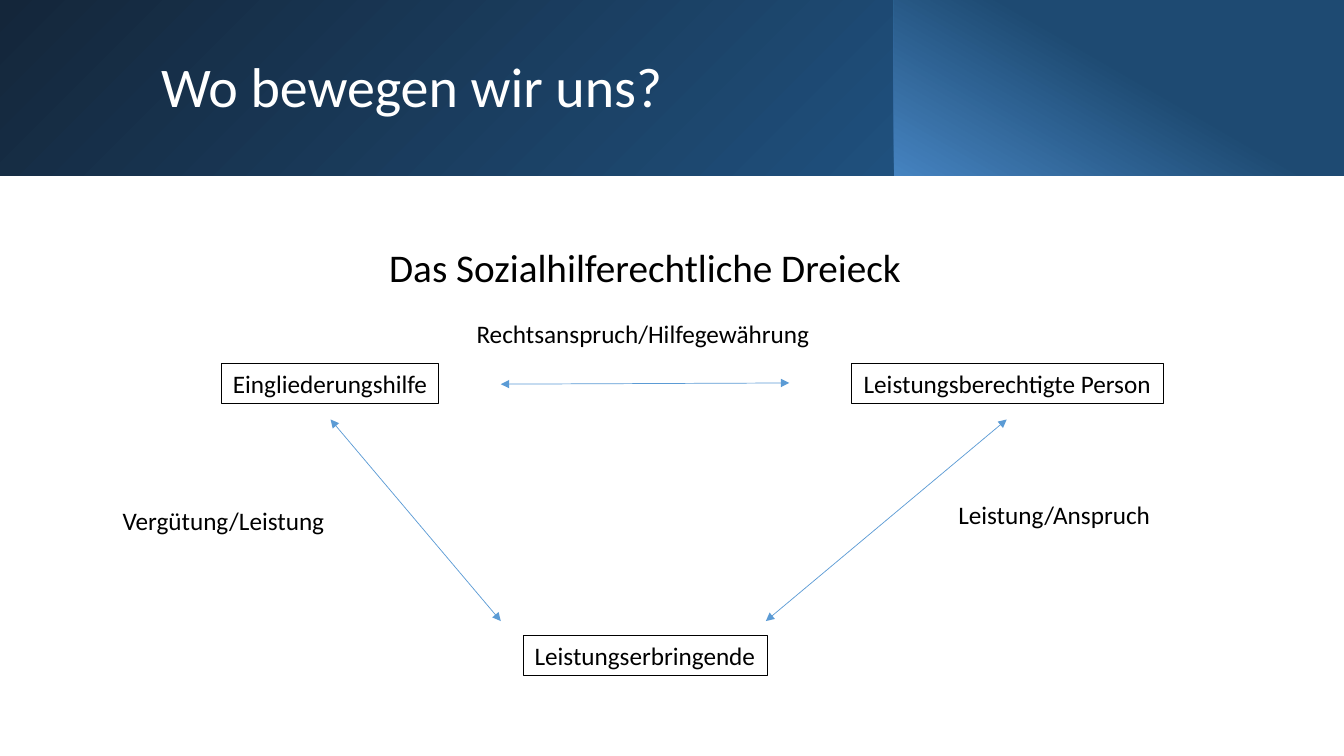
from dataclasses import dataclass
from lxml.etree import SubElement
from pptx import Presentation
from pptx.dml.color import RGBColor as Color
from pptx.enum.shapes import MSO_CONNECTOR as Link, MSO_SHAPE as Shape
from pptx.enum.text import MSO_ANCHOR as Anchor, PP_ALIGN as Align
from pptx.oxml.ns import qn
from pptx.util import Cm, Pt


@dataclass(frozen=True)
class Theme:
    font: str = "Calibri"
    ink: str = "000000"
    white: str = "FFFFFF"
    arrow: str = "5B9BD5"
    dark: tuple = ("14263A", "1F507D")
    light: tuple = ("4583C0", "1E4A72")
    title: int = 40
    head: int = 28
    body: int = 18
    line: float = 0.5


THEME = Theme()


def rgb(code):
    return Color.from_string(code)


def set_text(shape, text, size, color=THEME.ink, align=Align.LEFT, wrap=False):
    frame = shape.text_frame
    frame.text = text
    frame.word_wrap = wrap
    para = frame.paragraphs[0]
    para.alignment = align
    font = para.runs[0].font
    font.name = THEME.font
    font.size = Pt(size)
    font.color.rgb = rgb(color)
    return frame


def add_rect(slide, left, top, width, height):
    rect = slide.shapes.add_shape(
        Shape.RECTANGLE, Cm(left), Cm(top), Cm(width), Cm(height))
    rect.shadow.inherit = False
    return rect


def add_band(slide, left, width, colors, angle, end):
    band = add_rect(slide, left, 0, width, 4.43)
    band.line.fill.background()
    band.fill.gradient()
    band.fill.gradient_angle = angle
    for stop, color, place in zip(band.fill.gradient_stops, colors, (0, end)):
        stop.color.rgb = rgb(color)
        stop.position = place


def add_box(slide, text, left, top, width):
    box = add_rect(slide, left, top, width, 1.02)
    box.fill.background()
    box.line.color.rgb = rgb(THEME.ink)
    box.line.width = Pt(THEME.line)
    set_text(box, text, THEME.body, align=Align.CENTER)


def add_label(slide, text, left, top, width, height=1.02, **style):
    label = slide.shapes.add_textbox(
        Cm(left), Cm(top), Cm(width), Cm(height))
    style.setdefault("size", THEME.body)
    return set_text(label, text, **style)


def add_arrow(slide, start, end):
    arrow = slide.shapes.add_connector(
        Link.STRAIGHT, *(Cm(value) for value in start + end))
    arrow.line.color.rgb = rgb(THEME.arrow)
    arrow.line.width = Pt(THEME.line)
    props = arrow.line._get_or_add_ln()
    for tag in ("a:headEnd", "a:tailEnd"):
        SubElement(props, qn(tag), type="triangle")
    SubElement(arrow._element.spPr, qn("a:effectLst"))


def main():
    deck = Presentation()
    deck.slide_width, deck.slide_height = Cm(33.87), Cm(19.05)
    slide = deck.slides.add_slide(deck.slide_layouts[6])

    add_band(slide, 0, 22.53, THEME.dark, 315, 1)
    add_band(slide, 22.53, 11.34, THEME.light, 60, 0.55)

    title = add_label(slide, "Wo bewegen wir uns?", 3.81, 0.81, 27.48, 2.87,
                      size=THEME.title, color=THEME.white, wrap=True)
    title.vertical_anchor = Anchor.MIDDLE
    head = add_label(slide, "Das Sozialhilferechtliche Dreieck",
                     1.65, 6.15, 29.21, 12.09,
                     size=THEME.head, align=Align.CENTER, wrap=True)
    for frame in (title, head):
        frame.paragraphs[0].line_spacing = 0.9

    for text, left, top, width in (
            ("Eingliederungshilfe", 5.59, 9.15, 5.46),
            ("Leistungserbringende", 13.18, 16.01, 6.15),
            ("Leistungsberechtigte Person", 21.46, 9.15, 7.85)):
        add_box(slide, text, left, top, width)

    for start, end in (
            ((8.33, 10.57), (12.62, 15.65)),
            ((25.37, 10.57), (19.3, 15.65)),
            ((12.62, 9.68), (19.89, 9.65))):
        add_arrow(slide, start, end)

    for text, left, top, width in (
            ("Vergütung/Leistung", 2.84, 12.6, 5.66),
            ("Rechtsanspruch/Hilfegewährung", 11.76, 7.9, 8.99),
            ("Leistung/Anspruch", 23.9, 12.45, 5.41)):
        add_label(slide, text, left, top, width)

    deck.save("out.pptx")


if __name__ == "__main__":
    main()
